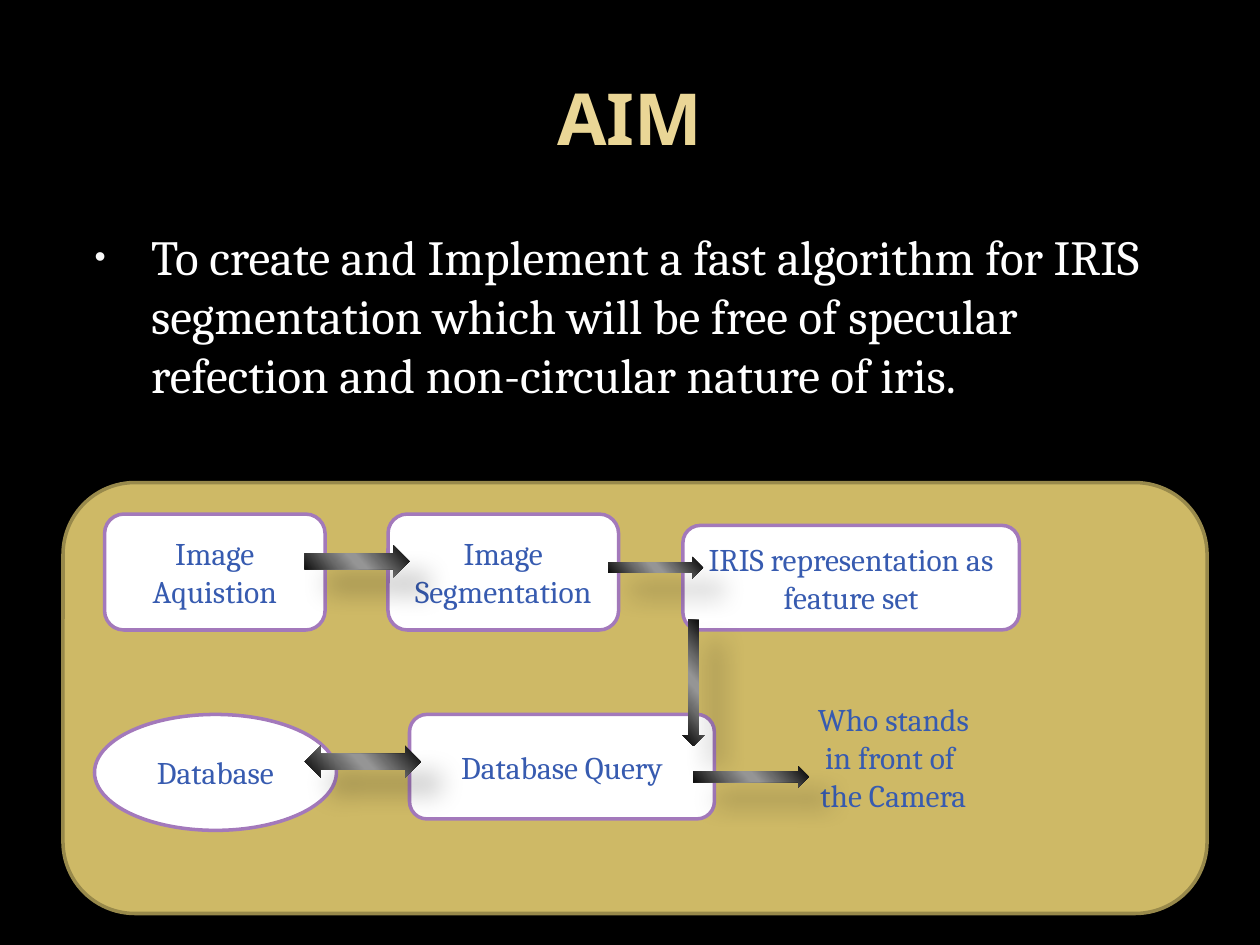
from lxml import etree
from pptx import Presentation
from pptx.dml.color import RGBColor
from pptx.enum.shapes import MSO_SHAPE as SHAPE
from pptx.enum.text import MSO_ANCHOR as ANCHOR, PP_ALIGN as ALIGN
from pptx.oxml import parse_xml
from pptx.oxml.ns import qn
from pptx.util import Inches, Pt

# Content
TITLE = "AIM"
AIM = ("To create and Implement a fast algorithm for IRIS segmentation which "
       "will be free of specular refection and non-circular nature of iris.")
RESULT = ["Who stands", "in front of ", "the Camera"]
PANEL = (0.5, 3.83, 9.08, 3.42)
STEPS = [  # text, shape, (left, top, width, height)
    ("Image Aquistion", SHAPE.ROUNDED_RECTANGLE, (0.83, 4.08, 1.75, 0.92)),
    ("Image Segmentation", SHAPE.ROUNDED_RECTANGLE, (3.08, 4.08, 1.83, 0.92)),
    ("IRIS representation as feature set", SHAPE.ROUNDED_RECTANGLE,
     (5.42, 4.17, 2.67, 0.83)),
    ("Database Query", SHAPE.ROUNDED_RECTANGLE, (3.25, 5.67, 2.42, 0.83)),
    ("Database", SHAPE.OVAL, (0.75, 5.67, 1.92, 0.92)),
]
ARROWS = [
    (SHAPE.RIGHT_ARROW, (2.42, 4.33, 0.83, 0.25)),
    (SHAPE.RIGHT_ARROW, (4.83, 4.42, 0.75, 0.17)),
    (SHAPE.DOWN_ARROW, (5.42, 4.92, 0.17, 1)),
    (SHAPE.LEFT_RIGHT_ARROW, (2.42, 5.92, 0.92, 0.25)),
    (SHAPE.RIGHT_ARROW, (5.5, 6.08, 0.92, 0.17)),
]

# Style
COLORS = {"background": "000000", "body": "FFFFFF", "bullet": "F9F9F9",
          "panel": "CEB966", "panel_line": "98894B", "step": "FFFFFF",
          "step_line": "A379BB", "label": "375BB0", "shadow": "000000"}
TITLE_STOPS = [(0, "EAD696"), (73, "EAD696"), (100, "E7D081")]
ARROW_STOPS = [(0, "000000"), (33, "6B6B6B"), (47, "959595"),
               (53, "959595"), (68, "6C6C6C"), (100, "000000")]
NS = 'xmlns:a="http://schemas.openxmlformats.org/drawingml/2006/main"'


def rgb(name):
    return RGBColor.from_string(COLORS[name])


def gradient(stops, angle):
    gs = "".join(f'<a:gs pos="{pos * 1000}"><a:srgbClr val="{color}"/></a:gs>'
                 for pos, color in stops)
    return parse_xml(f'<a:gradFill {NS} rotWithShape="1"><a:gsLst>{gs}</a:gsLst>'
                     f'<a:lin ang="{angle * 60000}" scaled="0"/></a:gradFill>')


def place(sp, box):
    sp.left, sp.top, sp.width, sp.height = map(Inches, box)


def add_run(p, text, size, color=None, font="Cambria"):
    r = p.add_run()
    r.text = text
    r.font.size, r.font.name = Pt(size), font
    if color:
        r.font.color.rgb = rgb(color)
    return r


def add_box(shapes, kind, box, fill, lines):
    sp = shapes.add_shape(kind, *map(Inches, box))
    sp.shadow.inherit = False
    sp.fill.solid()
    sp.fill.fore_color.rgb = rgb(fill)
    sp.line.color.rgb = rgb(fill + "_line")
    sp.line.width = Pt(2)
    tf = sp.text_frame
    tf.word_wrap = True
    tf.vertical_anchor = ANCHOR.MIDDLE
    for i, line in enumerate(lines):
        p = tf.add_paragraph() if i else tf.paragraphs[0]
        p.alignment = ALIGN.CENTER
        add_run(p, line, 18, "label")
    return sp


def add_arrow(shapes, kind, box):
    sp = shapes.add_shape(kind, *map(Inches, box))
    sp.line.fill.background()
    sp.shadow.inherit = False
    props = sp._element.spPr
    props.find(qn("a:prstGeom")).addnext(gradient(ARROW_STOPS, 139))
    props.find(qn("a:effectLst")).append(parse_xml(
        f'<a:outerShdw {NS} blurRad="{Pt(15)}" dist="{Pt(18)}" '
        f'dir="{45 * 60000}" algn="tl" rotWithShape="0">'
        f'<a:srgbClr val="{COLORS["shadow"]}"><a:alpha val="26000"/>'
        '</a:srgbClr></a:outerShdw>'))


def add_bullet(p):
    pPr = p._p.get_or_add_pPr()
    pPr.set("marL", str(Inches(0.6)))
    pPr.set("indent", str(Inches(-0.45)))
    color = etree.SubElement(pPr, qn("a:buClr"))
    etree.SubElement(color, qn("a:srgbClr")).set("val", COLORS["bullet"])
    etree.SubElement(pPr, qn("a:buSzPct")).set("val", "65000")
    etree.SubElement(pPr, qn("a:buChar")).set("char", "•")


def main():
    prs = Presentation()
    prs.slide_width, prs.slide_height = Inches(10), Inches(7.5)
    slide = prs.slides.add_slide(prs.slide_layouts[1])
    slide.background.fill.solid()
    slide.background.fill.fore_color.rgb = rgb("background")
    shapes = slide.shapes

    # Title
    title = shapes.title
    place(title, (0.5, 0.3, 9, 1.25))
    title.text_frame.vertical_anchor = ANCHOR.MIDDLE
    p = title.text_frame.paragraphs[0]
    p.alignment = ALIGN.CENTER
    r = add_run(p, TITLE, 41, font="Noto Sans")
    r.font.bold = True
    r._r.get_or_add_rPr().insert(0, gradient(TITLE_STOPS, 80))

    # Aim
    body = slide.placeholders[1]
    place(body, (0.5, 1.75, 9, 5.15))
    p = body.text_frame.paragraphs[0]
    p.space_before = Pt(0)
    add_bullet(p)
    add_run(p, AIM, 28, "body")

    # Panel, with the result of the query at its lower right
    panel = add_box(shapes, SHAPE.ROUNDED_RECTANGLE, PANEL, "panel", RESULT)
    panel.text_frame.margin_left = Inches(4.2)
    panel.text_frame.margin_top = Inches(0.98)

    # Steps and the arrows between them
    for text, kind, box in STEPS:
        add_box(shapes, kind, box, "step", [text])
    for kind, box in ARROWS:
        add_arrow(shapes, kind, box)

    prs.save("out.pptx")


if __name__ == "__main__":
    main()
